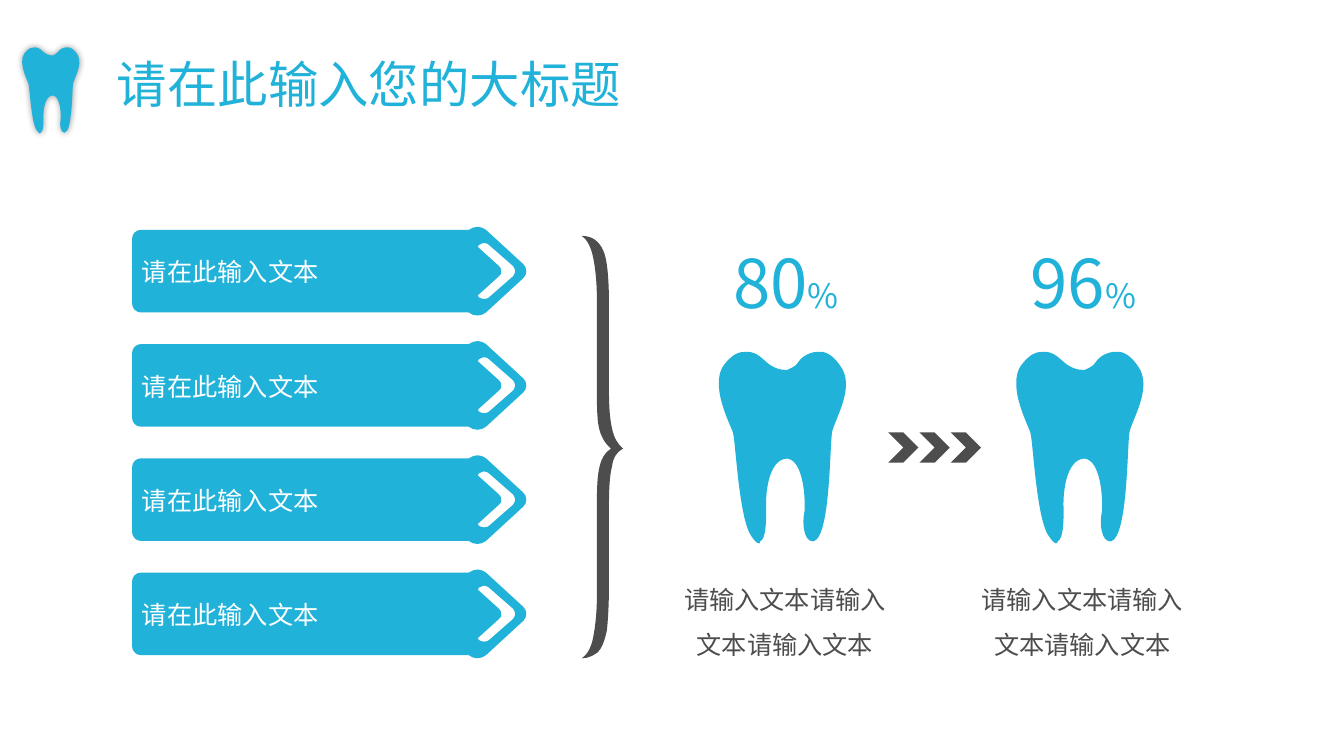
"""Build a slide of four arrow labels leading to two tooth figures."""
import lxml.etree
import pptx
import pptx.dml.color
import pptx.enum.shapes
import pptx.enum.text
import pptx.oxml.ns
import pptx.util

BLUE, GREY, WHITE = "21B2D9", "4D4D4D", "FFFFFF"
FONT = "Noto Sans CJK SC"
TITLE = "请在此输入您的大标题"
LABELS = ["请在此输入文本"] * 4
NOTE = "请输入文本请输入文本请输入文本"
TEETH = [("80", NOTE), ("96", NOTE)]

TOOTH = """M 93 188 L 94 188 C 110 184 110 100 112 82 C 112 72 134 40 123 18
C 116 6 108 0 101 0 L 99 0 C 91 0 83 4 79 10 C 75 16 71 16 68 18 L 66 18
C 55 18 47 10 47 10 C 44 8 38 0 28 0 L 27 0 C 20 0 14 2 6 12
C 1 18 0 24 0 32 C 0 50 11 72 14 80 C 17 92 20 168 33 184
C 36 188 38 190 39 190 C 41 190 41 190 41 188 C 47 186 47 166 47 156
C 46 142 49 106 68 106 C 83 108 86 142 85 158 C 82 172 85 188 93 188"""
ARROW = """M 349 16 C 348 16 346 17 344 18 L 343 20 L 364 39
C 366 41 366 42 366 44 C 367 46 366 47 364 49 L 343 68 L 344 70
C 347 72 352 72 354 70 L 378 49 C 379 47 380 46 380 44
C 380 42 379 41 378 39 L 354 18 C 353 17 351 16 349 16
M 343 0 C 345 0 348 1 351 3 L 388 37 C 390 39 391 41 391 44
C 391 47 390 49 388 51 L 351 85 C 346 89 339 89 334 85 L 9 85
C 4 85 0 81 0 76 L 0 12 C 0 7 4 3 9 3 L 334 3 C 337 1 340 0 343 0"""
BRACE = """M 15 62 C 15 44 13 29 11 20 C 9 11 5 3 0 0 C 10 0 17 5 21 14
C 25 21 27 41 27 68 L 27 154 C 27 170 28 182 30 191 C 32 200 35 206 41 211
C 35 214 31 220 30 229 C 28 236 27 249 27 267 L 27 346
C 27 366 26 381 25 391 C 23 401 20 409 16 413 C 12 416 7 419 0 419
C 5 416 9 409 11 400 C 13 390 15 376 15 358 L 15 278
C 15 257 15 242 17 232 C 19 221 23 215 29 211 C 23 206 19 199 17 190
C 15 181 15 166 15 147 L 15 62"""

qn = pptx.oxml.ns.qn
deck = pptx.Presentation()


def inch(size):
    return pptx.util.Cm(size * 2.54)


deck.slide_width, deck.slide_height = inch(13.33), inch(7.5)
slide = deck.slides.add_slide(deck.slide_layouts[6])


def paint(form, color):
    form.solid()
    form.fore_color.rgb = pptx.dml.color.RGBColor.from_string(color)


def plain(shape, color):
    paint(shape.fill, color)
    shape.line.fill.background()
    shape.shadow.inherit = False
    return shape


def bend(shape, marks):
    nodes = iter(list(shape._element.iter(qn("a:lnTo"))))
    for mark in marks:
        if mark == "L":
            next(nodes)
        elif mark == "C":
            trio = [next(nodes) for _ in range(3)]
            curve = lxml.etree.Element(qn("a:cubicBezTo"))
            trio[0].addprevious(curve)
            for node in trio:
                curve.append(node[0])
                node.getparent().remove(node)


def draw(path, left, top, color, scale=1):
    unit = inch(0.01) * scale
    loops = []
    for word in path.split():
        if word == "M":
            loops.append([])
        elif word.isdigit():
            loops[-1].append(int(word) * unit)
    loops = [list(zip(loop[::2], loop[1::2])) for loop in loops]
    pen = slide.shapes.build_freeform(*loops[0][0])
    for turn, loop in enumerate(loops):
        if turn:
            pen.move_to(*loop[0])
        pen.add_line_segments(loop[1:], close=True)
    shape = pen.convert_to_shape(inch(left), inch(top))
    bend(shape, path.split())
    return plain(shape, color)


def write(shape, text, size, color, unit="", align="LEFT", anchor="MIDDLE", space=1.0, right=0.1):
    frame = shape.text_frame
    frame.word_wrap = True
    frame.vertical_anchor = pptx.enum.text.MSO_ANCHOR[anchor]
    frame.margin_left, frame.margin_right = inch(0.1), inch(right)
    frame.margin_top = frame.margin_bottom = inch(0.05)
    line = frame.paragraphs[0]
    line.alignment = pptx.enum.text.PP_ALIGN[align]
    line.line_spacing = space
    for word, points in ((text, size), (unit, size / 2)):
        if word:
            run = line.add_run()
            run.text = word
            run.font.size = pptx.util.Pt(points)
            run.font.name = FONT
            paint(run.font.fill, color)
            east = lxml.etree.SubElement(run._r.get_or_add_rPr(), qn("a:ea"))
            east.set("typeface", FONT)


def box(left, top, width, height):
    return slide.shapes.add_textbox(inch(left), inch(top), inch(width), inch(height))


def glow(shape):
    effects = shape._element.spPr.find(qn("a:effectLst"))
    shade = lxml.etree.SubElement(effects, qn("a:outerShdw"), blurRad="63500", algn="ctr", rotWithShape="0")
    tint = lxml.etree.SubElement(shade, qn("a:srgbClr"), val="000000")
    lxml.etree.SubElement(tint, qn("a:alpha"), val="40000")


glow(draw(TOOTH, 0.22, 0.47, BLUE, scale=0.45))
write(box(1.06, 0.4, 11.45, 0.93), TITLE, 36, BLUE, space=0.9)

for row, label in enumerate(LABELS):
    arrow = draw(ARROW, 1.31, 2.25 + row * 3.4 / 3, BLUE)
    write(arrow, label, 18, WHITE, right=0.59)

draw(BRACE, 5.77, 2.34, GREY)

for col, (share, note) in enumerate(TEETH):
    left = 7.13 + col * 2.95
    draw(TOOTH, left, 3.49, BLUE)
    write(box(left - 0.2, 2.34, 1.73, 0.91), share, 48, BLUE, unit="%", align="CENTER", anchor="TOP")
    write(box(left - 0.46, 5.51, 2.23, 1.17), note, 18, GREY, align="CENTER", space=1.5)

for step in range(3):
    plain(slide.shapes.add_shape(
        pptx.enum.shapes.MSO_SHAPE.CHEVRON,
        inch(8.81 + step * 0.31), inch(4.29), inch(0.3), inch(0.3)), GREY)

deck.save("out.pptx")
